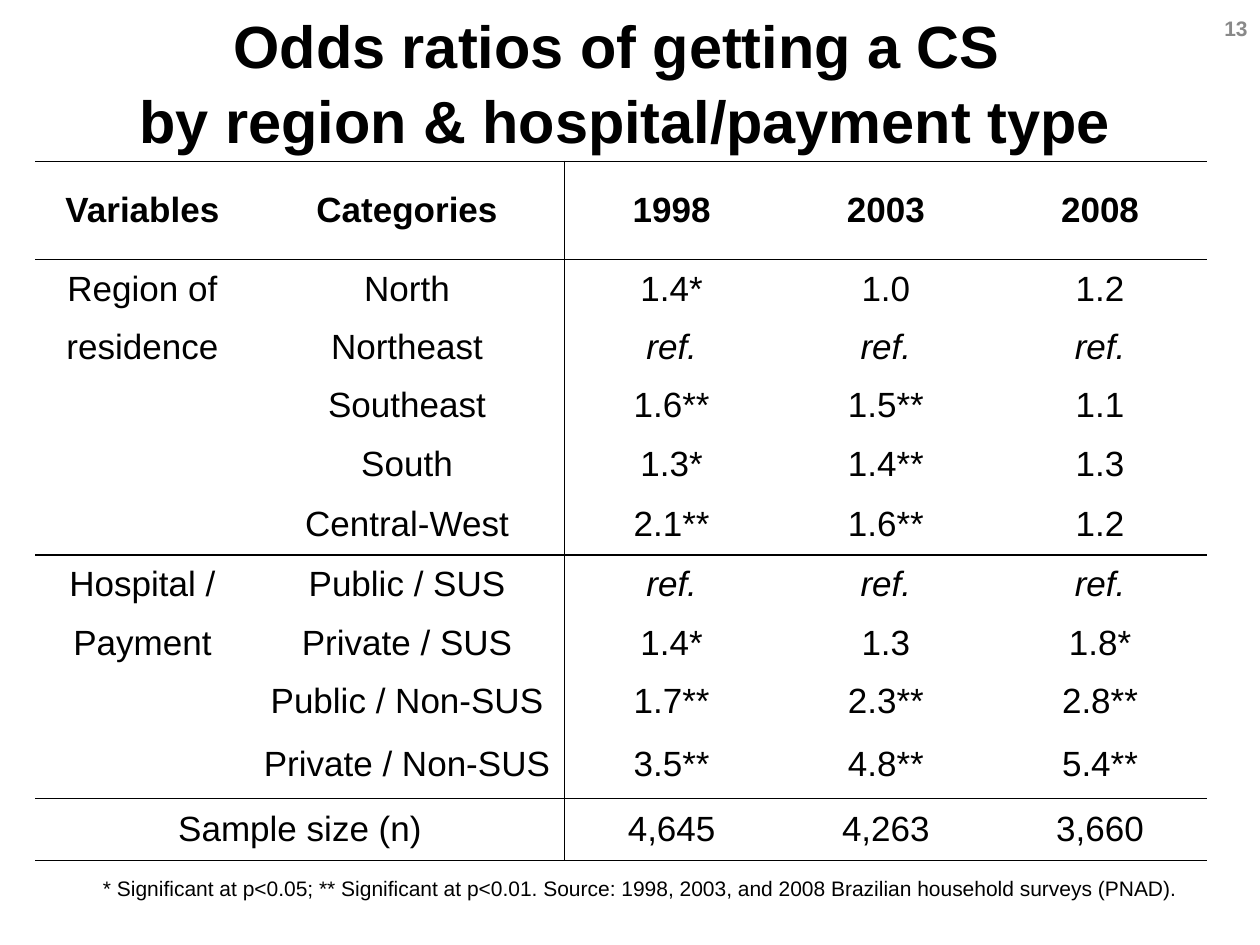
from lxml import etree
from pptx import Presentation
from pptx.dml.color import RGBColor
from pptx.enum import text as t
from pptx.oxml import ns
from pptx.util import Pt

BLACK = RGBColor(0x00, 0x00, 0x00)
WHITE = RGBColor(0xFF, 0xFF, 0xFF)
GRAY = RGBColor(0x89, 0x89, 0x89)
FONT = "Arial"

TITLE = "Odds ratios of getting a CS \vby region & hospital/payment type"
FOOTNOTE = ("* Significant at p<0.05; ** Significant at p<0.01. Source: 1998, 2003, "
            "and 2008 Brazilian household surveys (PNAD).")
PAGE_NUMBER = "13"
ROWS = [
    ("Variables", "Categories", "1998", "2003", "2008"),
    ("Region of", "North", "1.4*", "1.0", "1.2"),
    ("residence", "Northeast", "ref.", "ref.", "ref."),
    ("", "Southeast", "1.6**", "1.5**", "1.1"),
    ("", "South", "1.3*", "1.4**", "1.3"),
    ("", "Central-West", "2.1**", "1.6**", "1.2"),
    ("Hospital /", "Public / SUS", "ref.", "ref.", "ref."),
    ("Payment", "Private / SUS", "1.4*", "1.3", "1.8*"),
    ("", "Public / Non-SUS", "1.7**", "2.3**", "2.8**"),
    ("", "Private / Non-SUS", "3.5**", "4.8**", "5.4**"),
    ("Sample size (n)", "", "4,645", "4,263", "3,660"),
]
LAST = len(ROWS) - 1
RULED_TOPS = {0, 1, 6, LAST, LAST + 1}  # rows with a rule above; the final one closes the table
DIVIDER = 2  # column with a rule on its left
COLUMN_WIDTHS = [122.4, 180, 122.4, 122.4, 122.4]
SPECIAL_HEIGHTS = {0: 56.2, 5: 35.3, 9: 38.9, LAST: 35.3}
ROW_HEIGHT = 33.4


def set_format(target, values):
    for name, value in values.items():
        setattr(target, name, value)


def write(frame, content, size, align, color=BLACK, bold=False, italic=False):
    frame.text = content
    paragraph = frame.paragraphs[0]
    paragraph.alignment = align
    for run in paragraph.runs:
        set_format(run.font, {"name": FONT, "size": Pt(size), "bold": bold, "italic": italic})
        run.font.color.rgb = color
    return paragraph


def set_borders(cell, ruled_sides):
    """Draw a 1 pt line on each ruled side and none on the others."""
    properties = cell._tc.get_or_add_tcPr()
    for index, side in enumerate("LRTB"):
        line = etree.Element(ns.qn(f"a:ln{side}"), w=str(Pt(1)))
        if side in ruled_sides:
            fill = etree.SubElement(line, ns.qn("a:solidFill"))
            etree.SubElement(fill, ns.qn("a:srgbClr"), val=str(BLACK))
        else:
            etree.SubElement(line, ns.qn("a:noFill"))
        properties.insert(index, line)


def add_text(slide, box, anchor, *content, **style):
    frame = slide.shapes.add_textbox(*map(Pt, box)).text_frame
    set_format(frame, {"word_wrap": True, "vertical_anchor": anchor})
    return write(frame, *content, **style)


def add_odds_table(slide):
    heights = [SPECIAL_HEIGHTS.get(row, ROW_HEIGHT) for row in range(len(ROWS))]
    frame = slide.shapes.add_table(len(ROWS), len(COLUMN_WIDTHS), Pt(20.2), Pt(92.2),
                                   Pt(sum(COLUMN_WIDTHS)), Pt(sum(heights)))
    table = frame.table
    set_format(table, {"first_row": False, "horz_banding": False})
    for column, width in zip(table.columns, COLUMN_WIDTHS):
        column.width = Pt(width)
    for row, height in zip(table.rows, heights):
        row.height = Pt(height)
    table.cell(LAST, 0).merge(table.cell(LAST, 1))

    for row, values in enumerate(ROWS):
        for column, value in enumerate(values):
            cell = table.cell(row, column)
            roomy = row == 0 or column == 0
            side, edge = (Pt(7.2), Pt(3.6)) if roomy else (Pt(5.4), Pt(0))
            set_format(cell, {"margin_left": side, "margin_right": side, "margin_top": edge,
                              "margin_bottom": edge, "vertical_anchor": t.MSO_ANCHOR.MIDDLE})
            cell.fill.solid()
            cell.fill.fore_color.rgb = WHITE
            write(cell.text_frame, value, 20, t.PP_ALIGN.CENTER,
                  bold=row == 0, italic=value == "ref.")
            right_edge = column + (2 if cell.is_merge_origin else 1)
            rules = {"L": column == DIVIDER, "R": right_edge == DIVIDER,
                     "T": row in RULED_TOPS, "B": row + 1 in RULED_TOPS}
            set_borders(cell, [name for name, ruled in rules.items() if ruled])


def main():
    presentation = Presentation()
    set_format(presentation, {"slide_width": Pt(720), "slide_height": Pt(540)})
    slide = presentation.slides.add_slide(presentation.slide_layouts[5])

    title = slide.shapes.title
    set_format(title, {"left": Pt(-2.9), "top": Pt(3.6), "width": Pt(720), "height": Pt(85)})
    set_format(title.text_frame, {"word_wrap": True, "auto_size": t.MSO_AUTO_SIZE.NONE,
                                  "vertical_anchor": t.MSO_ANCHOR.MIDDLE})
    write(title.text_frame, TITLE, 34, t.PP_ALIGN.CENTER, bold=True).line_spacing = 1.05

    add_odds_table(slide)
    add_text(slide, (683.3, 0, 36.7, 31.7), t.MSO_ANCHOR.MIDDLE,
             PAGE_NUMBER, 12, t.PP_ALIGN.RIGHT, color=GRAY, bold=True)
    footnote = add_text(slide, (51.8, 496.8, 631.4, 18.7), t.MSO_ANCHOR.TOP,
                        FOOTNOTE, 12, t.PP_ALIGN.JUSTIFY)
    hanging = footnote._p.get_or_add_pPr()
    hanging.set("marL", str(Pt(27)))
    hanging.set("indent", str(Pt(-27)))

    presentation.save("out.pptx")


if __name__ == "__main__":
    main()
